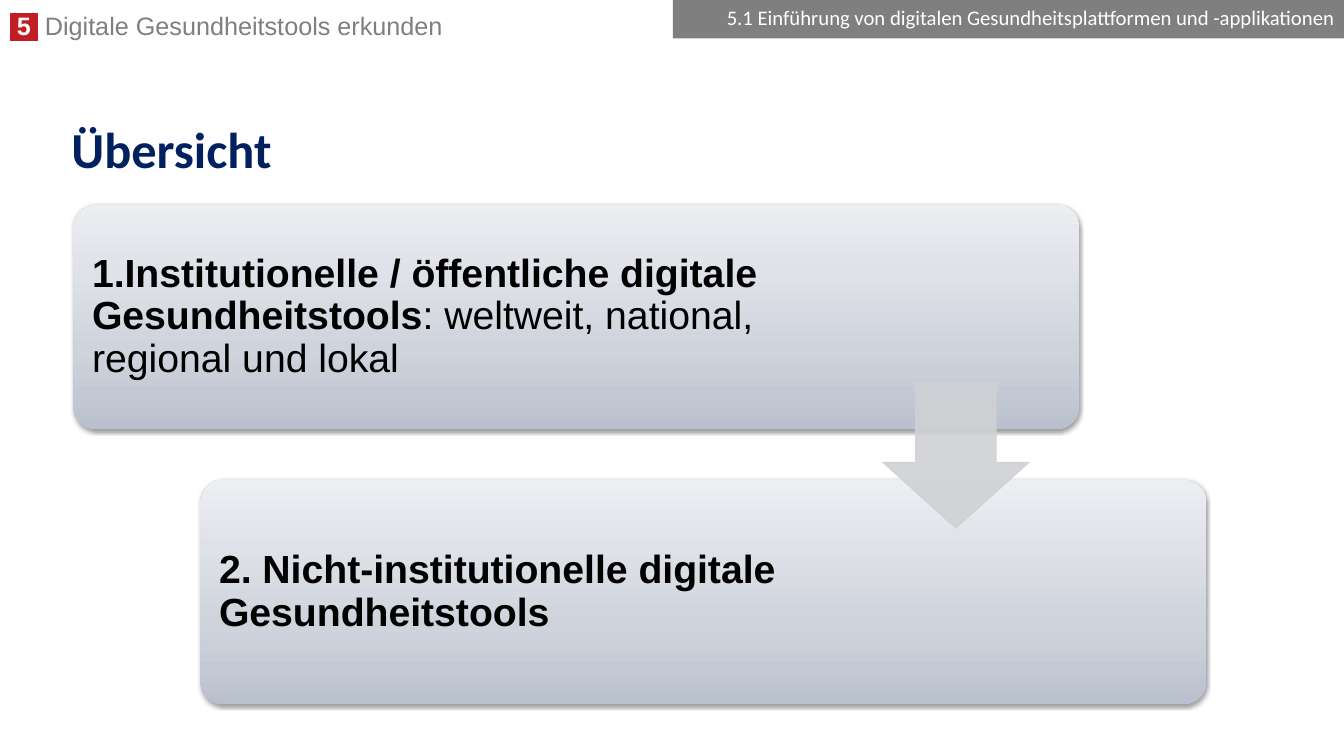
from lxml import etree
from pptx import Presentation
from pptx.dml.color import RGBColor
from pptx.enum import shapes, text
from pptx.oxml import ns, parse_xml
from pptx.util import Cm, Pt

COLOURS = {
    "white": "FFFFFF", "black": "000000", "grey": "7F7F7F", "navy": "002060",
    "red": "C01E24", "arrow": "CFD1D4",
    "card_low": "BAC1CE", "card_mid": "CFD3DC", "card_top": "EDEEF2",
}
A = 'xmlns:a="http://schemas.openxmlformats.org/drawingml/2006/main"'


def colour(name):
    return RGBColor.from_string(COLOURS[name])


def add_span(para, words, size, tint, font="Arial", bold=False, highlight=None):
    span = para.add_run()
    span.text = words
    span.font.size = Pt(size)
    span.font.name = font
    span.font.bold = bold
    span.font.color.rgb = colour(tint)
    if highlight:
        properties = span.font._element
        properties.find(ns.qn("a:solidFill")).addnext(parse_xml(
            f'<a:highlight {A}><a:srgbClr val="{COLOURS[highlight]}"/></a:highlight>'))


def format_frame(box, anchor, spacing, align=text.PP_ALIGN.LEFT, margins=(0.25, 0.13)):
    """Set up the text frame and return its first paragraph."""
    frame = box.text_frame
    frame.word_wrap = True
    frame.auto_size = text.MSO_AUTO_SIZE.NONE
    frame.vertical_anchor = anchor
    frame.margin_left = frame.margin_right = Cm(margins[0])
    frame.margin_top = frame.margin_bottom = Cm(margins[1])
    para = frame.paragraphs[0]
    para.alignment = align
    para.line_spacing = spacing
    return para


def add_chapter(page):
    box = page.shapes.add_textbox(Cm(0), Cm(0.28), Cm(24.18), Cm(0.89))
    para = format_frame(box, text.MSO_ANCHOR.TOP, 0.8)
    add_span(para, " 5 ", 18, "white", bold=True, highlight="red")
    add_span(para, " Digitale Gesundheitstools erkunden", 18, "grey")


def add_title(page, words):
    title = page.shapes.title
    title.left, title.top, title.width, title.height = Cm(1.55), Cm(3), Cm(30.73), Cm(1.68)
    para = format_frame(title, text.MSO_ANCHOR.MIDDLE, 0.9)
    add_span(para, words, 36, "navy", font="Calibri", bold=True)


def add_card(page, left, top, text_width, spans):
    """Add a rounded gradient card with its text; spans are (words, bold) pairs."""
    card = page.shapes.add_shape(shapes.MSO_SHAPE.ROUNDED_RECTANGLE,
                                 Cm(left), Cm(top), Cm(25.35), Cm(5.66))
    card.adjustments[0] = 0.1
    card.line.fill.background()
    card.fill.gradient()
    card.fill.gradient_angle = 90
    stops = card._element.spPr.find(ns.qn("a:gradFill")).find(ns.qn("a:gsLst"))
    for stop in list(stops):
        stops.remove(stop)
    for position, name in ((0, "card_low"), (35, "card_mid"), (100, "card_top")):
        stop = etree.SubElement(stops, ns.qn("a:gs"), pos=str(position * 1000))
        etree.SubElement(stop, ns.qn("a:srgbClr"), val=COLOURS[name])
    card._element.spPr.append(parse_xml(
        f'<a:effectLst {A}><a:outerShdw blurRad="{Pt(3.1)}" dist="{Pt(1.6)}" dir="5400000" '
        f'rotWithShape="0"><a:srgbClr val="{COLOURS["black"]}"><a:alpha val="38000"/>'
        '</a:srgbClr></a:outerShdw></a:effectLst>'))

    box = page.shapes.add_textbox(Cm(left + 0.17), Cm(top + 0.17), Cm(text_width), Cm(5.33))
    para = format_frame(box, text.MSO_ANCHOR.MIDDLE, 0.9, margins=(0.3, 0.3))
    for words, bold in spans:
        add_span(para, words, 28, "black", bold=bold)


def add_down_arrow(page):
    arrow = page.shapes.add_shape(shapes.MSO_SHAPE.DOWN_ARROW,
                                  Cm(22.25), Cm(9.63), Cm(3.68), Cm(3.68))
    arrow.adjustments[0], arrow.adjustments[1] = 0.55, 0.45
    arrow.shadow.inherit = False
    arrow.line.width = Pt(0.75)
    for fill in (arrow.fill, arrow.line.fill):
        fill.solid()
        fill.fore_color.rgb = colour("arrow")
    for tint in arrow._element.spPr.iter(ns.qn("a:srgbClr")):
        etree.SubElement(tint, ns.qn("a:alpha"), val="90000")


def add_section_bar(page, words):
    bar = page.shapes.add_shape(shapes.MSO_SHAPE.RECTANGLE,
                                Cm(16.96), Cm(0), Cm(16.91), Cm(0.97))
    bar.shadow.inherit = False
    bar.fill.solid()
    bar.fill.fore_color.rgb = colour("grey")
    bar.line.fill.background()
    para = format_frame(bar, text.MSO_ANCHOR.MIDDLE, 0.8, text.PP_ALIGN.RIGHT)
    add_span(para, words, 14.8, "white", font="Calibri")


def main():
    deck = Presentation()
    deck.slide_width, deck.slide_height = Cm(33.87), Cm(19.05)
    page = deck.slides.add_slide(deck.slide_layouts[5])
    add_chapter(page)
    add_title(page, "Übersicht")
    add_card(page, 1.85, 5.16, 19.48, [
        ("1.Institutionelle / öffentliche digitale Gesundheitstools", True),
        (": weltweit, national, regional und lokal", False),
    ])
    add_card(page, 5.05, 12.09, 16.87, [
        ("2. Nicht-institutionelle digitale Gesundheitstools", True),
    ])
    add_down_arrow(page)
    add_section_bar(
        page, "5.1 Einführung von digitalen Gesundheitsplattformen und -applikationen")
    deck.save("out.pptx")


if __name__ == "__main__":
    main()
